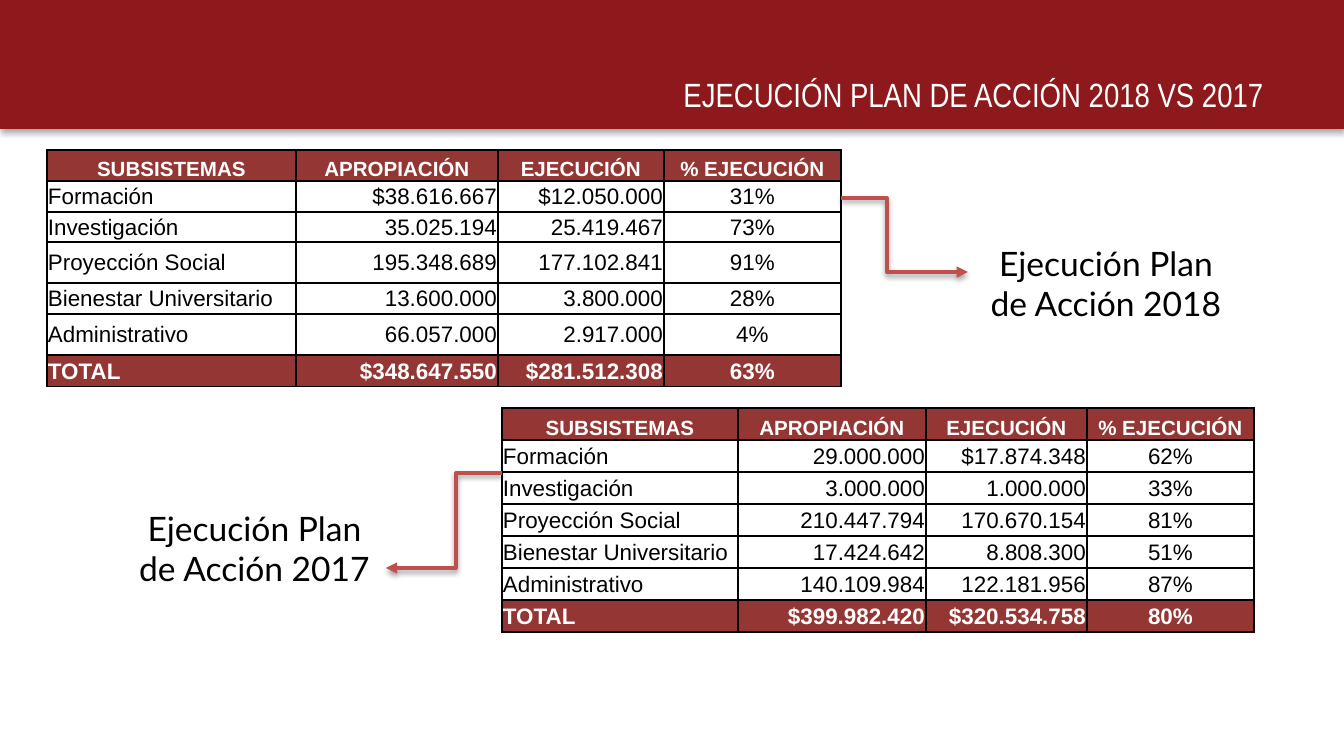
import pptx
import pptx.util
import pptx.dml.color
import pptx.enum.shapes
import pptx.enum.text
import pptx.oxml
import pptx.oxml.ns

ALIGN = pptx.enum.text.PP_ALIGN
ANCHOR = pptx.enum.text.MSO_ANCHOR
SHAPE = pptx.enum.shapes.MSO_SHAPE
CONNECTOR = pptx.enum.shapes.MSO_CONNECTOR
NS = pptx.oxml.ns.nsdecls("a")

HEADERS = ["SUBSISTEMAS", "APROPIACIÓN", "EJECUCIÓN", "% EJECUCIÓN"]
PLAN_2018 = [
    ["Formación", "$38.616.667", "$12.050.000", "31%"],
    ["Investigación", "35.025.194", "25.419.467", "73%"],
    ["Proyección Social", "195.348.689", "177.102.841", "91%"],
    ["Bienestar Universitario", "13.600.000", "3.800.000", "28%"],
    ["Administrativo", "66.057.000", "2.917.000", "4%"],
    ["TOTAL", "$348.647.550", "$281.512.308", "63%"],
]
PLAN_2017 = [
    ["Formación", "29.000.000", "$17.874.348", "62%"],
    ["Investigación", "3.000.000", "1.000.000", "33%"],
    ["Proyección Social", "210.447.794", "170.670.154", "81%"],
    ["Bienestar Universitario", "17.424.642", "8.808.300", "51%"],
    ["Administrativo", "140.109.984", "122.181.956", "87%"],
    ["TOTAL", "$399.982.420", "$320.534.758", "80%"],
]


def px(n):
    return pptx.util.Emu(round(n * 914400 / 134.4))


def rgb(color):
    return pptx.dml.color.RGBColor.from_string(color)


def write(tf, text, size=12, font="Arial", color="000000", bold=False, align=ALIGN.LEFT):
    p = tf.paragraphs[0]
    p.alignment = align
    r = p.add_run()
    r.text = text
    r.font.size = pptx.util.Pt(size)
    r.font.name = font
    r.font.bold = bold
    r.font.color.rgb = rgb(color)


def add_shadow(sp, dist, alpha):
    sp._element.spPr.append(pptx.oxml.parse_xml(
        f'<a:effectLst {NS}><a:outerShdw blurRad="{pptx.util.Pt(3.1)}" '
        f'dist="{pptx.util.Pt(dist)}" dir="5400000" rotWithShape="0">'
        f'<a:srgbClr val="000000"><a:alpha val="{alpha * 1000}"/></a:srgbClr>'
        f'</a:outerShdw></a:effectLst>'))


class Deck:
    banner_fill = "8D191D"
    table_fill = "943634"
    arrow_color = "C0504D"
    border_color = "000000"
    white = "FFFFFF"

    def __init__(self, width, height):
        self.prs = pptx.Presentation()
        self.prs.slide_width = px(width)
        self.prs.slide_height = px(height)
        self.s = self.prs.slides.add_slide(self.prs.slide_layouts[6])

    def banner(self, x, y, w, h):
        sp = self.s.shapes.add_shape(SHAPE.RECTANGLE, px(x), px(y), px(w), px(h))
        sp.fill.solid()
        sp.fill.fore_color.rgb = rgb(self.banner_fill)
        sp.line.color.rgb = rgb(self.banner_fill)
        sp.line.width = pptx.util.Pt(0.75)
        add_shadow(sp, 1.8, 35)

    def text(self, x, y, w, h, text, bottom=7, **fmt):
        sp = self.s.shapes.add_textbox(px(x), px(y), px(w), px(h))
        tf = sp.text_frame
        tf.word_wrap = True
        tf.vertical_anchor = ANCHOR.MIDDLE
        tf.margin_bottom = px(bottom)
        write(tf, text, **fmt)

    def border(self, cell):
        tc_pr = cell._tc.get_or_add_tcPr()
        for i, side in enumerate(("lnL", "lnR", "lnT", "lnB")):
            tc_pr.insert(i, pptx.oxml.parse_xml(
                f'<a:{side} {NS} w="{pptx.util.Pt(1)}"><a:solidFill>'
                f'<a:srgbClr val="{self.border_color}"/></a:solidFill></a:{side}>'))

    def table(self, x, y, widths, heights, rows):
        rows = [HEADERS] + rows
        frame = self.s.shapes.add_table(
            len(rows), len(widths), px(x), px(y), px(sum(widths)), px(sum(heights)))
        tbl = frame.table
        tbl.first_row = False
        tbl.horz_banding = False
        for col, width in zip(tbl.columns, widths):
            col.width = px(width)
        for row, height in zip(tbl.rows, heights):
            row.height = px(height)
        aligns = [ALIGN.LEFT, ALIGN.RIGHT, ALIGN.RIGHT, ALIGN.CENTER]
        for i, values in enumerate(rows):
            header = i == 0
            strong = header or i == len(rows) - 1
            for j, value in enumerate(values):
                cell = tbl.cell(i, j)
                cell.margin_left = cell.margin_right = cell.margin_top = px(1)
                cell.margin_bottom = 0
                cell.vertical_anchor = ANCHOR.BOTTOM if header else ANCHOR.MIDDLE
                if strong:
                    cell.fill.solid()
                    cell.fill.fore_color.rgb = rgb(self.table_fill)
                else:
                    cell.fill.background()
                self.border(cell)
                write(cell.text_frame, value, size=11 if header else 12, bold=strong,
                      color=self.white if strong else "000000",
                      align=ALIGN.CENTER if header else aligns[j])

    def elbow_arrow(self, x1, y1, x2, y2, bend):
        c = self.s.shapes.add_connector(CONNECTOR.ELBOW, px(x1), px(y1), px(x2), px(y2))
        c.line.color.rgb = rgb(self.arrow_color)
        c.line.width = pptx.util.Pt(2)
        c.line._get_or_add_ln().append(
            pptx.oxml.parse_xml(f'<a:tailEnd {NS} type="triangle"/>'))
        ratio = round((bend - x1) / (x2 - x1) * 100000)
        guides = c._element.spPr.find(".//" + pptx.oxml.ns.qn("a:avLst"))
        guides.append(pptx.oxml.parse_xml(
            f'<a:gd {NS} name="adj1" fmla="val {ratio}"/>'))
        add_shadow(c, 1.6, 38)


def main():
    deck = Deck(1344, 756)
    label = dict(size=18, font="Lato", align=ALIGN.CENTER)

    deck.banner(0, 0, 1344, 128)
    deck.text(67, 31, 1210, 126, "EJECUCIÓN PLAN DE ACCIÓN 2018 VS 2017", size=18,
              font="Arial Narrow", color=deck.white, align=ALIGN.RIGHT)

    deck.table(47, 150, [249, 202, 166, 177], [31, 31, 30, 41, 31, 41, 32], PLAN_2018)
    deck.elbow_arrow(841, 198, 968, 272, bend=887)
    deck.text(968, 219, 276, 129, "Ejecución Plan de Acción 2018", **label)

    deck.table(502, 408, [236, 188, 161, 167], [32] * 7, PLAN_2017)
    deck.elbow_arrow(502, 473, 386, 568, bend=456)
    deck.text(122, 505, 265, 126, "Ejecución Plan de Acción 2017", bottom=47, **label)

    deck.prs.save("out.pptx")


if __name__ == "__main__":
    main()
